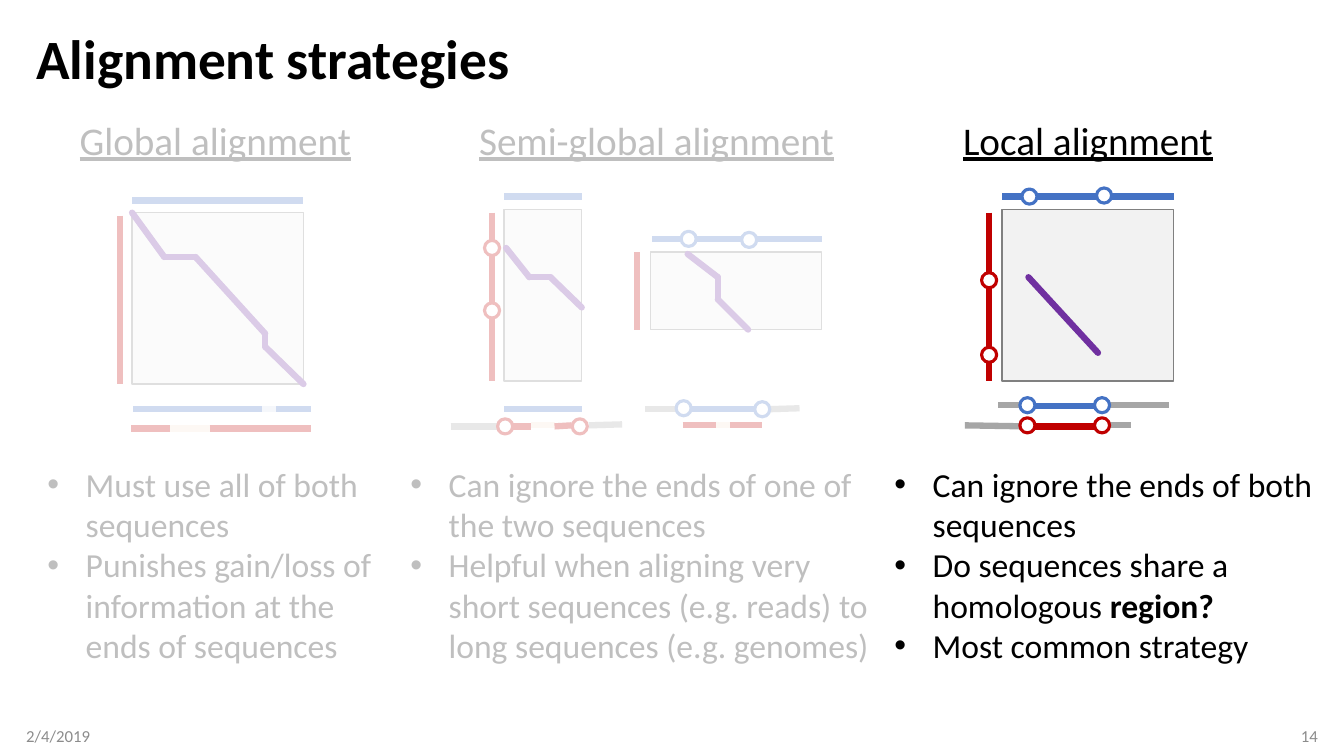
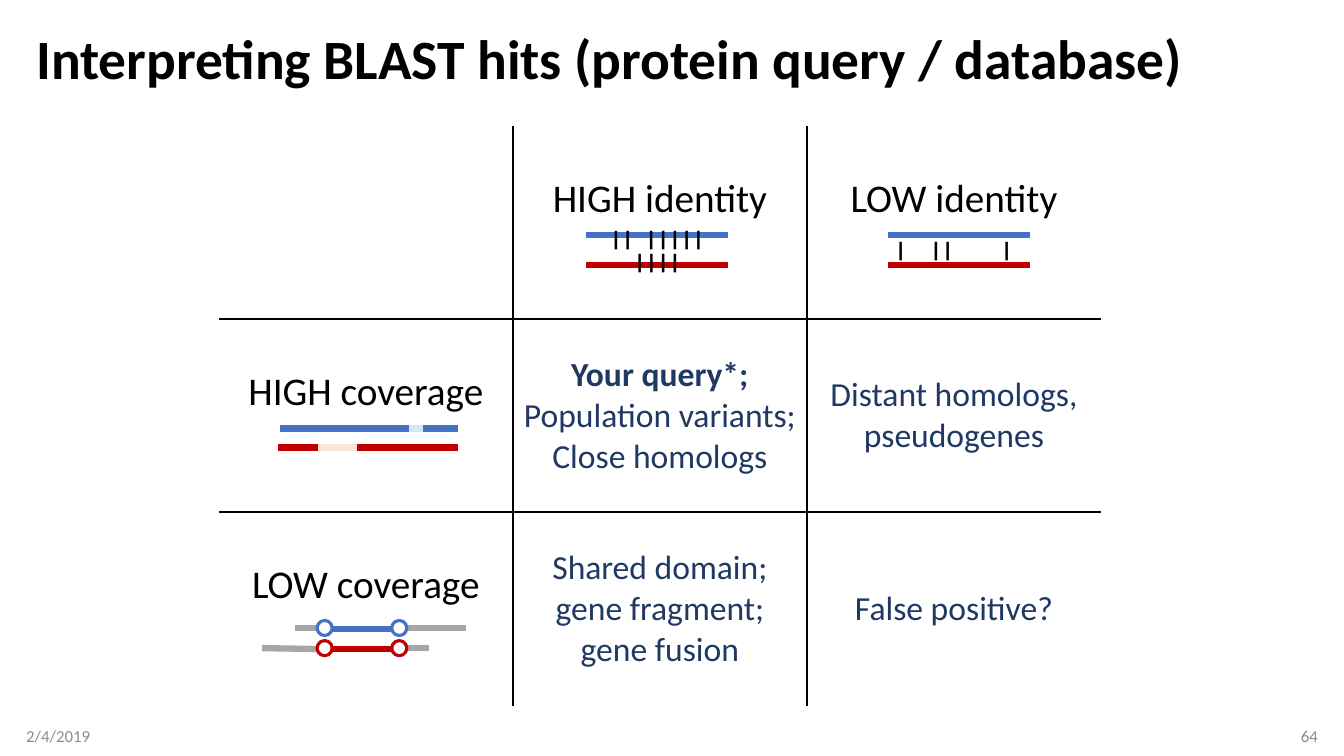
from itertools import pairwise

from lxml import etree
from pptx import Presentation
from pptx.dml.color import RGBColor
from pptx.enum import shapes, text
from pptx.oxml import ns
from pptx.util import Inches, Pt

THEME = {
    "font": "Calibri",
    "mono": "Courier New",
    "colors": {
        "ink": "000000", "footer": "8C8C8C", "answer": "203864",
        "paper": "FFFFFF", "matrix": "F2F2F2", "matrix_edge": "808080",
        "query": "4472C4", "subject": "C00000", "route": "7030A0",
        "ignored": "A6A6A6", "query_gap": "DAE3F3", "subject_gap": "FBE5D6",
    },
    "sizes": {"title": 39.6, "heading": 28, "body": 24, "tick": 14, "footer": 12},
    "lines": {"strand": 4.5, "ring": 2.25, "grid": 1.5, "edge": 1},
}
RING = 0.15
DATE = "2/4/2019"

STRATEGIES = [
    {"heading": "Global alignment", "heading_at": (0.37, 1.1, 3.53, 0.57),
     "list_at": (0.37, 4.55, 3.53, 2.12),
     "points": [["Must use all of both sequences"],
                ["Punishes gain/loss of information at the ends of sequences"]]},
    {"heading": "Semi-global alignment", "heading_at": (4.59, 1.1, 3.84, 0.57),
     "list_at": (3.97, 4.55, 4.8, 2.12),
     "points": [["Can ignore the ends of one of the two sequences"],
                ["Helpful when aligning very short sequences (e.g. reads) "
                 "to long sequences (e.g. genomes)"]]},
    {"heading": "Local alignment", "heading_at": (8.87, 1.1, 3.84, 0.57),
     "list_at": (8.77, 4.55, 4.4, 2.12),
     "points": [["Can ignore the ends of both sequences"],
                ["Do sequences share a homologous ", ("region?", True)],
                ["Most common strategy"]]},
]

GLOBAL_PAIR = {
    "strands": [
        ("query", [(0.02, 0), (1.33, 0)]),
        ("query_gap", [(1.3, 0), (1.46, 0)]),
        ("query", [(1.44, 0), (1.78, 0)]),
        ("subject", [(0, 0.19), (0.39, 0.19)]),
        ("subject_gap", [(0.39, 0.19), (0.78, 0.19)]),
        ("subject", [(0.78, 0.19), (1.78, 0.19)]),
    ],
}
LOCAL_PAIR = {
    "strands": [
        ("query", [(0.6, 0.01), (1.35, 0.01)]),
        ("subject", [(0.6, 0.21), (1.35, 0.21)]),
        ("ignored", [(0.33, 0), (0.61, 0)]),
        ("ignored", [(0, 0.2), (0.61, 0.21)]),
        ("ignored", [(1.34, 0), (2.02, 0)]),
        ("ignored", [(1.34, 0.2), (1.65, 0.2)]),
    ],
    "rings": [("query", 0.62, 0), ("query", 1.36, 0),
              ("subject", 0.62, 0.2), ("subject", 1.36, 0.2)],
}
GLOBAL_MATRIX = {
    "matrix": (0, 0, 1.7, 1.7),
    "strands": [
        ("query", [(0, -0.12), (1.7, -0.12)]),
        ("subject", [(-0.12, 0.03), (-0.12, 1.7)]),
        ("route", [(0, 0), (0.32, 0.44), (0.63, 0.44),
                   (1.32, 1.2), (1.32, 1.33), (1.7, 1.7)]),
    ],
}
LOCAL_MATRIX = {
    "matrix": (0, 0, 1.7, 1.7),
    "strands": [
        ("query", [(0, -0.13), (1.7, -0.13)]),
        ("subject", [(-0.13, 0.03), (-0.13, 1.7)]),
        ("route", [(0.26, 0.67), (0.95, 1.42)]),
    ],
    "rings": [("subject", -0.13, 0.7), ("subject", -0.13, 1.44),
              ("query", 0.27, -0.13), ("query", 1.01, -0.14)],
}
SHORT_QUERY = {
    "matrix": (0, 0, 0.77, 1.7),
    "strands": [
        ("query", [(0, -0.13), (0.77, -0.13)]),
        ("subject", [(-0.12, 0.03), (-0.12, 1.7)]),
        ("route", [(0.02, 0.38), (0.25, 0.67), (0.46, 0.67), (0.77, 0.97)]),
        ("query", [(0, 1.98), (0.77, 1.98)]),
        ("ignored", [(-0.53, 2.15), (-0.07, 2.15)]),
        ("subject", [(0.08, 2.15), (0.27, 2.15)]),
        ("subject_gap", [(0.27, 2.14), (0.5, 2.14)]),
        ("subject", [(0.5, 2.15), (0.67, 2.14)]),
        ("ignored", [(0.84, 2.14), (1.17, 2.13)]),
    ],
    "rings": [("subject", -0.12, 0.38), ("subject", -0.12, 1),
              ("subject", 0.01, 2.15), ("subject", 0.75, 2.15)],
}
SHORT_SUBJECT = {
    "matrix": (0, 0, 1.7, 0.77),
    "strands": [
        ("query", [(0.02, -0.13), (1.7, -0.13)]),
        ("subject", [(-0.13, 0), (-0.13, 0.77)]),
        ("route", [(0.37, 0.02), (0.67, 0.25), (0.67, 0.47), (0.97, 0.77)]),
        ("ignored", [(-0.05, 1.56), (0.25, 1.56)]),
        ("query", [(0.38, 1.56), (1.03, 1.56)]),
        ("ignored", [(1.17, 1.56), (1.48, 1.55)]),
        ("subject", [(0.32, 1.72), (0.65, 1.72)]),
        ("subject_gap", [(0.65, 1.72), (0.79, 1.72)]),
        ("subject", [(0.79, 1.72), (1.11, 1.72)]),
    ],
    "rings": [("query", 0.38, -0.13), ("query", 0.98, -0.12),
              ("query", 0.33, 1.55), ("query", 1.11, 1.56)],
}
IDENTITY_PAIR = {
    "strands": [("query", [(0, 0), (1.41, 0)]),
                ("subject", [(0, 0.3), (1.41, 0.3)])],
}

STRATEGY_FIGURES = [
    (GLOBAL_MATRIX, (1.31, 2.11)), (GLOBAL_PAIR, (1.3, 4.06)),
    (SHORT_SUBJECT, (6.45, 2.5)), (SHORT_QUERY, (5, 2.08)),
    (LOCAL_MATRIX, (9.94, 2.08)), (LOCAL_PAIR, (9.57, 4.02)),
]
HIT_FIGURES = [
    (IDENTITY_PAIR, (5.81, 2.33)), (IDENTITY_PAIR, (8.81, 2.33)),
    (GLOBAL_PAIR, (2.76, 4.25)), (LOCAL_PAIR, (2.6, 6.23)),
]
HITS = [
    [[], ["HIGH identity"], ["LOW identity"]],
    [["HIGH coverage"],
     [("Your query*;", True), "Population variants;", "Close homologs"],
     ["Distant homologs,", "pseudogenes"]],
    [["LOW coverage"],
     ["Shared domain;", "gene fragment;", "gene fusion"],
     ["False positive?"]],
]
HITS_AT = (2.17, 1.25, 8.75, 5.75)
MATCHES = [("|| ||||| ||||", 5.67), ("|  ||    | ", 8.67)]


def color(name):
    return RGBColor.from_string(THEME["colors"][name])


def assign(target, values):
    for key, value in values.items():
        setattr(target, key, value)


def place(shape, at):
    assign(shape, dict(zip(("left", "top", "width", "height"), map(Inches, at))))


def write(frame, paragraphs, size, ink="ink", font=THEME["font"], bold=False,
          underline=False, **layout):
    for index, runs in enumerate(paragraphs):
        paragraph = frame.paragraphs[0] if index == 0 else frame.add_paragraph()
        assign(paragraph, {"space_before": Pt(0), "line_spacing": 1.0, **layout})
        for piece in runs:
            words, strong = piece if isinstance(piece, tuple) else (piece, bold)
            run = paragraph.add_run()
            run.text = words
            assign(run.font, {"name": font, "size": Pt(THEME["sizes"][size]),
                              "bold": strong, "underline": underline})
            run.font.color.rgb = color(ink)


def add_label(slide, at, words, size, frame_format=None, **style):
    label = slide.shapes.add_textbox(*map(Inches, at))
    assign(label.text_frame, {"word_wrap": True, **(frame_format or {})})
    write(label.text_frame, [[words]], size, **style)


def paint(shape, fill, edge=None, weight="edge"):
    shape.shadow.inherit = False
    shape.fill.solid()
    shape.fill.fore_color.rgb = color(fill)
    if edge:
        shape.line.color.rgb = color(edge)
        shape.line.width = Pt(THEME["lines"][weight])
    else:
        shape.line.fill.background()


def add_strand(parts, start, end, ink):
    strand = parts.add_connector(shapes.MSO_CONNECTOR.STRAIGHT,
                                 *map(Inches, (*start, *end)))
    strand.line.color.rgb = color(ink)
    strand.line.width = Pt(THEME["lines"]["strand"])
    if ink == "route":
        strand.line._get_or_add_ln().set("cap", "rnd")
    etree.SubElement(strand._element.spPr, ns.qn("a:effectLst"))


def add_figure(slide, figure, origin):
    x, y = origin
    parts = slide.shapes.add_group_shape().shapes
    if "matrix" in figure:
        left, top, width, height = figure["matrix"]
        matrix = parts.add_shape(shapes.MSO_SHAPE.RECTANGLE,
                                 *map(Inches, (x + left, y + top, width, height)))
        paint(matrix, "matrix", "matrix_edge")
    for ink, points in figure["strands"]:
        for start, end in pairwise((x + dx, y + dy) for dx, dy in points):
            add_strand(parts, start, end, ink)
    for ink, dx, dy in figure.get("rings", []):
        corner = (x + dx - RING / 2, y + dy - RING / 2)
        ring = parts.add_shape(shapes.MSO_SHAPE.OVAL,
                               *map(Inches, (*corner, RING, RING)))
        paint(ring, "paper", ink, "ring")


def start_slide(deck, layout, title, number):
    slide = deck.slides.add_slide(deck.slide_layouts.get_by_name(layout))
    heading = slide.shapes.title
    place(heading, (0.26, 0.25, 12.81, 0.72))
    assign(heading.text_frame, {"vertical_anchor": text.MSO_ANCHOR.MIDDLE,
                                "auto_size": text.MSO_AUTO_SIZE.NONE})
    write(heading.text_frame, [[title]], "title", bold=True,
          alignment=text.PP_ALIGN.LEFT, line_spacing=0.9)
    for left, words, side, align in ((0.26, DATE, "margin_left", "LEFT"),
                                     (10.07, number, "margin_right", "RIGHT")):
        add_label(slide, (left, 7.1, 3, 0.4), words, "footer",
                  {"vertical_anchor": text.MSO_ANCHOR.MIDDLE, side: 0},
                  ink="footer", alignment=text.PP_ALIGN[align])
    return slide


def fill_list(body, strategy):
    place(body, strategy["list_at"])
    assign(body.text_frame, {"vertical_anchor": text.MSO_ANCHOR.TOP,
                             "auto_size": text.MSO_AUTO_SIZE.NONE})
    write(body.text_frame, strategy["points"], "body")
    for paragraph in body.text_frame.paragraphs:
        props = paragraph._p.get_or_add_pPr()
        props.set("marL", str(Inches(0.38)))
        props.set("indent", str(Inches(-0.38)))
        etree.SubElement(props, ns.qn("a:buFont"), typeface="Arial")
        etree.SubElement(props, ns.qn("a:buChar"), char="•")


def add_veil(slide):
    veil = slide.shapes.add_shape(shapes.MSO_SHAPE.RECTANGLE,
                                  *map(Inches, (0.37, 1.1, 8.3, 5.99)))
    paint(veil, "paper")
    tint = veil._element.spPr.find(".//" + ns.qn("a:srgbClr"))
    etree.SubElement(tint, ns.qn("a:alpha"), val="75000")


def rule_cell(cell, sides):
    props = cell._tc.get_or_add_tcPr()
    for side, ruled in sides.items():
        edge = etree.SubElement(props, ns.qn("a:ln" + side),
                                w=str(Pt(THEME["lines"]["grid"])))
        if ruled:
            ink = etree.SubElement(edge, ns.qn("a:solidFill"))
            etree.SubElement(ink, ns.qn("a:srgbClr"), val=THEME["colors"]["ink"])
        else:
            etree.SubElement(edge, ns.qn("a:noFill"))
    cell.fill.background()


def add_hits(slide):
    grid = slide.shapes.add_table(3, 3, *map(Inches, HITS_AT)).table
    assign(grid, {"first_row": False, "horz_banding": False})
    for r, row in enumerate(HITS):
        for c, lines in enumerate(row):
            cell = grid.cell(r, c)
            rule_cell(cell, {"L": c > 0, "R": c < 2, "T": r > 0, "B": r < 2})
            header = r == 0 or c == 0
            assign(cell, {"vertical_anchor": text.MSO_ANCHOR.MIDDLE,
                          "margin_bottom": Inches(0.52 if header else 0.05)})
            write(cell.text_frame, [[line] for line in lines],
                  "heading" if header else "body", "ink" if header else "answer",
                  alignment=text.PP_ALIGN.CENTER)


def build_strategies(deck):
    slide = start_slide(deck, "Comparison", "Alignment strategies", "14")
    *bodies, spare = list(slide.placeholders)[1:]
    spare._element.getparent().remove(spare._element)
    for body, strategy in zip(bodies, STRATEGIES):
        add_label(slide, strategy["heading_at"], strategy["heading"], "heading",
                  underline=True, alignment=text.PP_ALIGN.CENTER)
        fill_list(body, strategy)
    for figure, origin in STRATEGY_FIGURES:
        add_figure(slide, figure, origin)
    add_veil(slide)


def build_hits(deck):
    slide = start_slide(deck, "Title Only",
                        "Interpreting BLAST hits (protein query / database)", "64")
    add_hits(slide)
    for figure, origin in HIT_FIGURES:
        add_figure(slide, figure, origin)
    for ticks, left in MATCHES:
        add_label(slide, (left, 2.3, 1.7, 0.34), ticks, "tick",
                  {"vertical_anchor": text.MSO_ANCHOR.MIDDLE},
                  font=THEME["mono"], bold=True, alignment=text.PP_ALIGN.CENTER)


def main():
    deck = Presentation()
    assign(deck, {"slide_width": Inches(13.33), "slide_height": Inches(7.5)})
    build_strategies(deck)
    build_hits(deck)
    deck.save("out.pptx")


if __name__ == "__main__":
    main()
